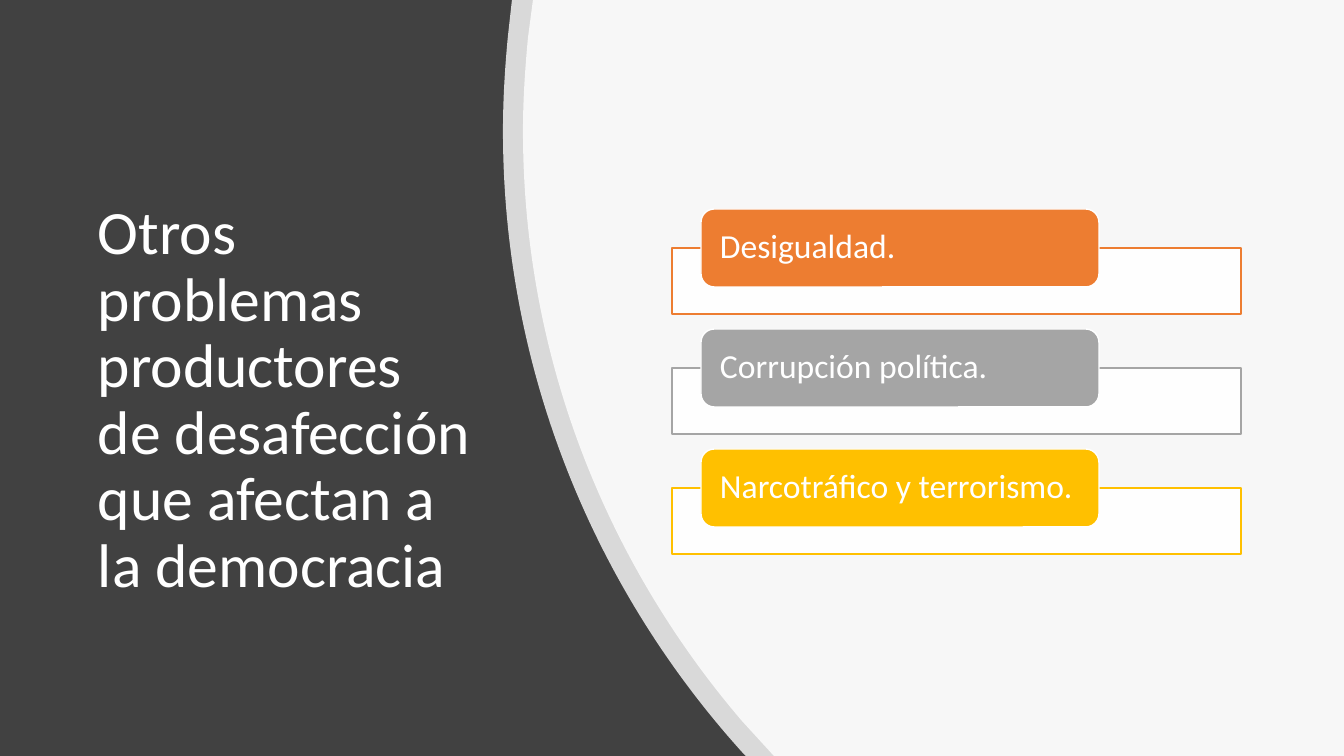
from lxml.etree import SubElement
from pptx import Presentation
from pptx.dml.color import RGBColor
from pptx.enum.shapes import MSO_SHAPE as Shape
from pptx.enum.text import MSO_ANCHOR as Anchor, PP_ALIGN as Align
from pptx.oxml.ns import qn
from pptx.util import Pt

TITLE = "Otros problemas productores de desafección que afectan a la democracia"
PROBLEMS = [
    ("Desigualdad.", "ED7D31"),
    ("Corrupción política.", "A5A5A5"),
    ("Narcotráfico y terrorismo.", "FFC000"),
]
FONT, DARK, WHITE = "Calibri", "414141", "FFFFFF"
WIDTH, HEIGHT = 1344, 756
CURVED_PANELS = [
    {
        "corners": [(512, 0), (WIDTH, 0), (WIDTH, HEIGHT), (746, HEIGHT), (742, 752)],
        "curves": [(594, 588), (503, 370), (503, 131), (503, 99), (505, 67), (508, 36)],
    },
    {
        "corners": [(533, 0), (WIDTH, 0), (WIDTH, HEIGHT), (774, HEIGHT), (742, 721)],
        "curves": [(606, 562), (523, 357), (523, 131), (523, 100), (525, 70), (528, 38)],
    },
]
ROW_TOP, ROW_STEP = 209, 120
BAR_LEFT, BAR_DROP, BAR_WIDTH, BAR_HEIGHT = 672, 39, 569, 66
LABEL_LEFT, LABEL_WIDTH, LABEL_HEIGHT = 701, 398, 78
TEXT_GAP = 4


def px(length):
    return round(length * 914400 / 100.8)


def box(*lengths):
    return [px(length) for length in lengths]


def color(value):
    return RGBColor.from_string(value)


def paint(shape, fill, opacity=100, line=None):
    shape.shadow.inherit = False
    shape.fill.solid()
    shape.fill.fore_color.rgb = color(fill)
    if opacity < 100:
        tint = shape.fill._xPr.find(qn("a:solidFill"))[0]
        SubElement(tint, qn("a:alpha"), val=str(opacity * 1000))
    if line:
        shape.line.color.rgb = color(line)
        shape.line.width = Pt(1)
    else:
        shape.line.fill.background()


def write(shapes, place, text, size, inset_x, inset_y):
    frame = shapes.add_textbox(*place).text_frame
    frame.word_wrap = True
    frame.vertical_anchor = Anchor.MIDDLE
    frame.margin_left = frame.margin_right = px(inset_x)
    frame.margin_top = frame.margin_bottom = px(inset_y)
    para = frame.paragraphs[0]
    para.text = text
    para.alignment = Align.LEFT
    para.line_spacing = 0.9
    para.font.name = FONT
    para.font.size = Pt(size)
    para.font.color.rgb = color(WHITE)


def add_curved_panel(page, corners, curves):
    start, *points = [box(*point) for point in corners + curves]
    builder = page.shapes.build_freeform(*start)
    builder.add_line_segments(points)
    panel = builder.convert_to_shape()
    lines = list(panel.element.iter(qn("a:lnTo")))[len(corners) - 1:][:len(curves)]
    for first in range(0, len(curves), 3):
        bezier = lines[first].getparent().makeelement(qn("a:cubicBezTo"))
        lines[first].addprevious(bezier)
        for line in lines[first:first + 3]:
            bezier.append(line[0])
            line.getparent().remove(line)
    paint(panel, WHITE, 80)


def add_problem(shapes, top, text, accent):
    bar = shapes.add_shape(
        Shape.RECTANGLE, *box(BAR_LEFT, top + BAR_DROP, BAR_WIDTH, BAR_HEIGHT))
    paint(bar, WHITE, 90, accent)
    label = shapes.add_shape(
        Shape.ROUNDED_RECTANGLE, *box(LABEL_LEFT, top, LABEL_WIDTH, LABEL_HEIGHT))
    label.adjustments[0] = 0.17
    paint(label, accent, line=WHITE)
    place = box(LABEL_LEFT + TEXT_GAP, top + TEXT_GAP,
                LABEL_WIDTH - 2 * TEXT_GAP, LABEL_HEIGHT - 2 * TEXT_GAP)
    write(shapes, place, text, 24, 15, 0)


def main():
    deck = Presentation()
    deck.slide_width, deck.slide_height = box(WIDTH, HEIGHT)
    page = deck.slides.add_slide(deck.slide_layouts[6])
    page.background.fill.solid()
    page.background.fill.fore_color.rgb = color(DARK)
    write(page.shapes, box(88, 154, 396, 494), TITLE, 44, 10, 5)
    for panel in CURVED_PANELS:
        add_curved_panel(page, **panel)
    diagram = page.shapes.add_group_shape()
    for index, (text, accent) in enumerate(PROBLEMS):
        add_problem(diagram.shapes, ROW_TOP + index * ROW_STEP, text, accent)
    deck.save("out.pptx")


if __name__ == "__main__":
    main()
